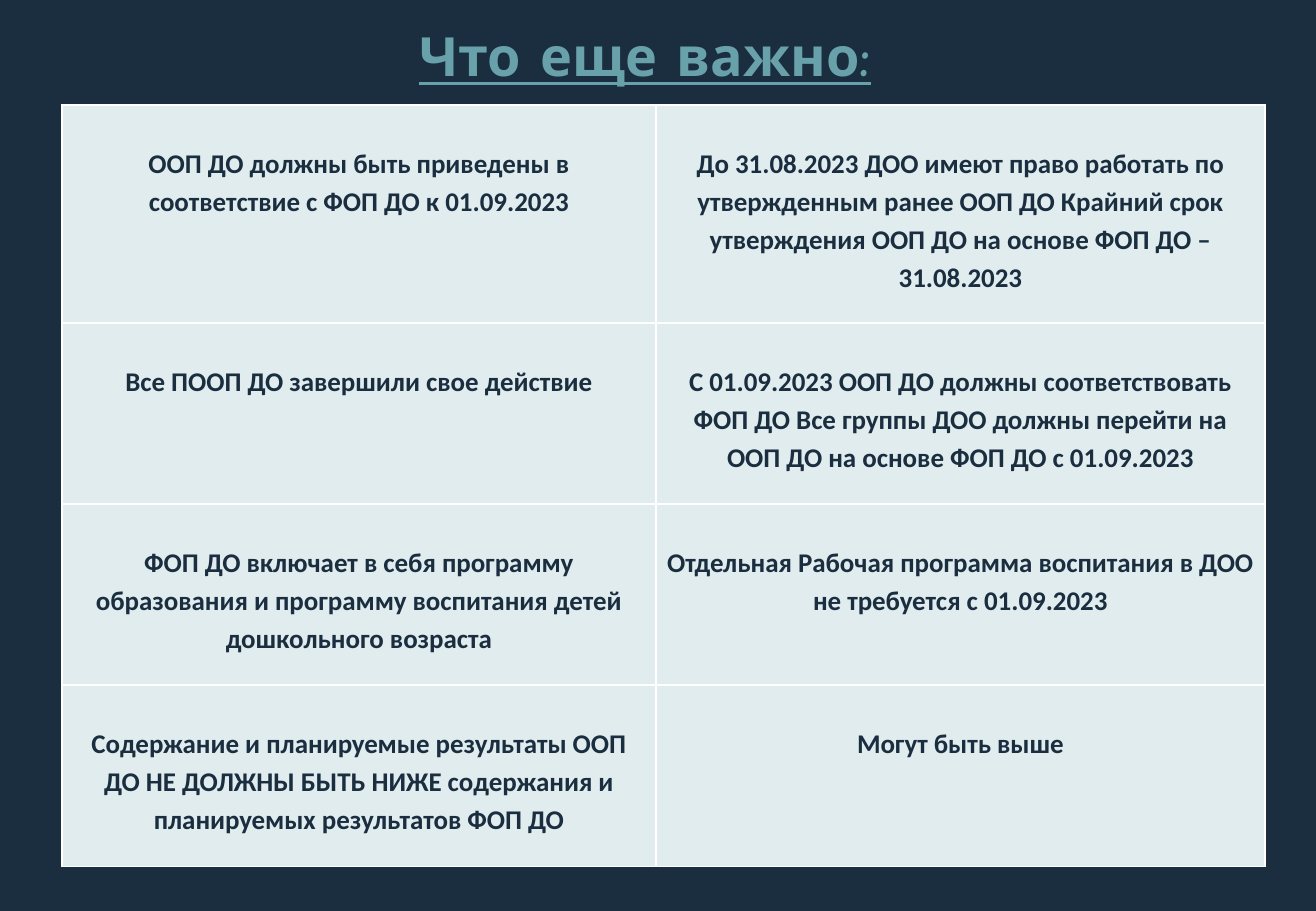
from typing import NamedTuple

from lxml import etree
from pptx import Presentation
from pptx.dml.color import RGBColor
from pptx.enum.text import MSO_ANCHOR, MSO_AUTO_SIZE, PP_ALIGN
from pptx.oxml.ns import qn
from pptx.util import Pt

CENTER = PP_ALIGN.CENTER
TOP = MSO_ANCHOR.TOP
GROW = MSO_AUTO_SIZE.SHAPE_TO_FIT_TEXT

COLORS = {
    "navy": "1A2E40",
    "teal": "69A1AB",
    "pale": "E1ECEE",
    "white": "FFFFFF",
}


class Row(NamedTuple):
    left: str
    right: str
    height: float = 107.4


ROWS = [
    Row("ООП ДО должны быть приведены в соответствие с ФОП ДО к 01.09.2023",
        "До 31.08.2023 ДОО имеют право работать по утвержденным ранее ООП ДО "
        "Крайний срок утверждения ООП ДО на основе ФОП ДО – 31.08.2023",
        height=129.2),
    Row("Все ПООП ДО завершили свое действие",
        "С 01.09.2023 ООП ДО должны соответствовать ФОП ДО Все группы ДОО "
        "должны перейти на ООП ДО на основе ФОП ДО с 01.09.2023"),
    Row("ФОП ДО включает в себя программу образования и программу воспитания "
        "детей дошкольного возраста",
        "Отдельная Рабочая программа воспитания в ДОО не требуется с 01.09.2023"),
    Row("Содержание и планируемые результаты ООП ДО НЕ ДОЛЖНЫ БЫТЬ НИЖЕ "
        "содержания и планируемых результатов ФОП ДО",
        "Могут быть выше"),
]
COLUMN_WIDTHS = (352, 361)


def rgb(name: str) -> RGBColor:
    return RGBColor.from_string(COLORS[name])


def write(tf, text: str, *, size: float, font: str, color: str,
          underline: bool = False, spacing: float = 1.0) -> None:
    p = tf.paragraphs[0]
    p.alignment = CENTER
    p.line_spacing = spacing
    r = p.add_run()
    r.text = text
    r.font.size = Pt(size)
    r.font.name = font
    r.font.bold = True
    r.font.underline = underline
    r.font.color.rgb = rgb(color)


def add_borders(cell, color: str, width: float) -> None:
    tc_pr = cell._tc.get_or_add_tcPr()
    for i, side in enumerate(("lnL", "lnR", "lnT", "lnB")):
        ln = etree.Element(qn(f"a:{side}"), w=str(Pt(width)))
        fill = etree.SubElement(ln, qn("a:solidFill"))
        etree.SubElement(fill, qn("a:srgbClr"), val=COLORS[color])
        tc_pr.insert(i, ln)  # borders come before the cell fill


def fill_cell(cell, text: str) -> None:
    cell.margin_left = cell.margin_right = Pt(5)
    cell.margin_top, cell.margin_bottom = Pt(22.5), Pt(0)
    cell.vertical_anchor = TOP
    cell.fill.solid()
    cell.fill.fore_color.rgb = rgb("pale")
    add_borders(cell, "white", 1)
    write(cell.text_frame, text, size=16, font="Calibri", color="navy", spacing=1.15)


def add_title(s, text: str) -> None:
    sp = s.shapes.add_textbox(Pt(-15), Pt(10), Pt(795), Pt(46))
    tf = sp.text_frame
    tf.word_wrap = True
    tf.auto_size = GROW
    write(tf, text, size=32, font="Comic Neue", color="teal", underline=True)


def add_facts(s, rows: list[Row]) -> None:
    height = sum(row.height for row in rows)
    frame = s.shapes.add_table(len(rows), len(COLUMN_WIDTHS), Pt(36.8), Pt(62.2),
                               Pt(sum(COLUMN_WIDTHS)), Pt(height))
    table = frame.table
    table.first_row = table.horz_banding = False
    for column, width in zip(table.columns, COLUMN_WIDTHS):
        column.width = Pt(width)
    for i, row in enumerate(rows):
        table.rows[i].height = Pt(row.height)
        for j, text in enumerate((row.left, row.right)):
            fill_cell(table.cell(i, j), text)


def main() -> None:
    prs = Presentation()
    prs.slide_width, prs.slide_height = Pt(780), Pt(540)
    s = prs.slides.add_slide(prs.slide_layouts[6])

    # Background
    s.background.fill.solid()
    s.background.fill.fore_color.rgb = rgb("navy")

    # Table and title
    add_facts(s, ROWS)
    add_title(s, "Что еще важно:")

    prs.save("out.pptx")


if __name__ == "__main__":
    main()
